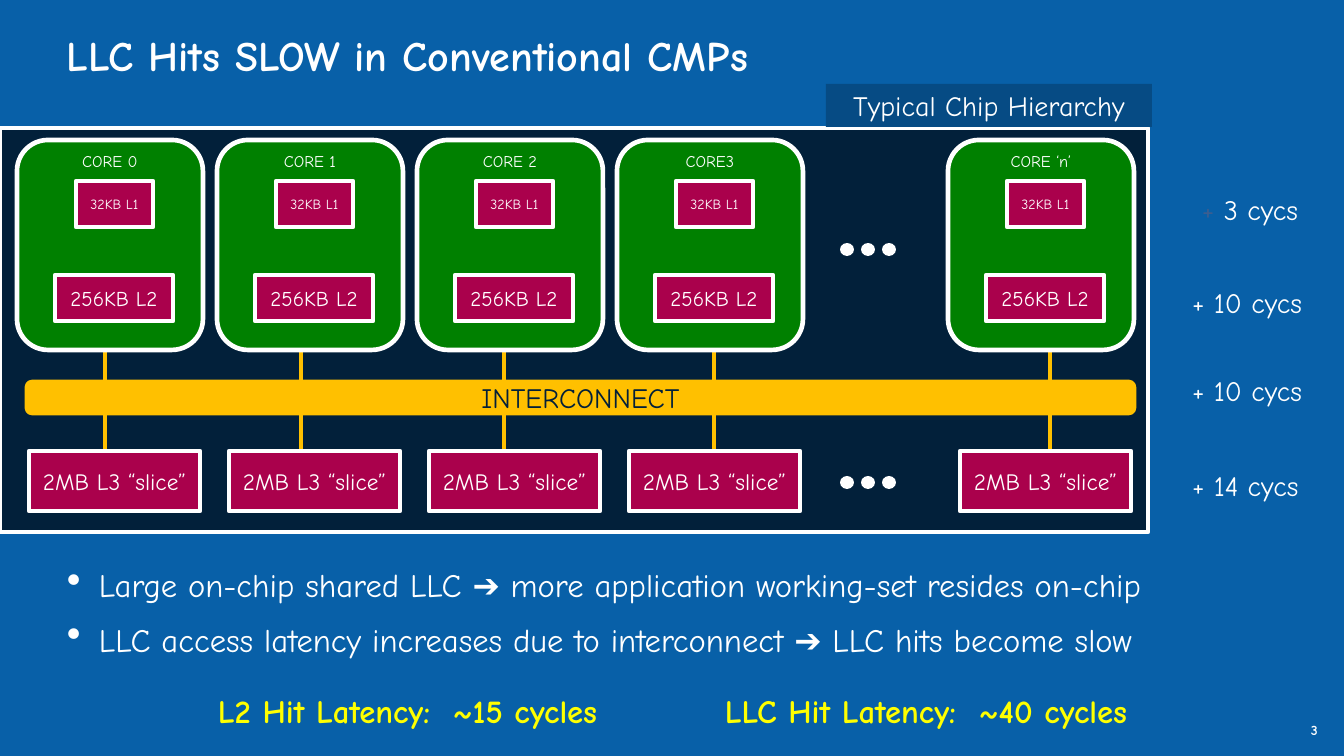
import pptx
import pptx.dml.color
import pptx.enum.shapes
import pptx.enum.text
import pptx.oxml.ns
import pptx.util
from lxml import etree

SHAPE = pptx.enum.shapes.MSO_SHAPE
ALIGN = pptx.enum.text.PP_ALIGN
ANCHOR = pptx.enum.text.MSO_ANCHOR

WHITE, NAVY, BLUE, DEEP_BLUE = "FFFFFF", "02203A", "0860A8", "064B84"
GREEN, CRIMSON, AMBER, YELLOW = "008000", "AA014C", "FFC000", "FFFF00"
FADED = "3C5E90"

CORES = [  # label, left of the core, x of its link
    ("CORE 0", 17, 105),
    ("CORE 1", 217, 301),
    ("CORE 2", 417, 504),
    ("CORE3", 617, 714),
    ("CORE ‘n’", 948, 1050),
]


def px(n):
    """Turn pixels (84 to the inch) into EMU."""
    return pptx.util.Emu(round(n * 914400 / 84))


def rgb(color):
    return pptx.dml.color.RGBColor.from_string(color)


def add_xml(parent, tag, **attrs):
    return etree.SubElement(parent, pptx.oxml.ns.qn(tag), attrs)


class Deck:
    font = "Comic Neue"
    line_width = pptx.util.Pt(4)

    def __init__(self, width, height):
        self.prs = pptx.Presentation()
        self.prs.slide_width, self.prs.slide_height = px(width), px(height)

    def add_slide(self, background):
        self.s = self.prs.slides.add_slide(self.prs.slide_layouts[6])
        fill = self.s.background.fill
        fill.solid()
        fill.fore_color.rgb = rgb(background)

    def style(self, p, size, color, bold=False):
        p.font.name, p.font.size, p.font.bold = self.font, pptx.util.Pt(size), bold
        p.font.color.rgb = rgb(color)

    def shape(self, kind, x, y, w, h, fill, line=None, text="", size=12,
              color=WHITE, anchor=ANCHOR.MIDDLE):
        sp = self.s.shapes.add_shape(kind, px(x), px(y), px(w), px(h))
        sp.shadow.inherit = False
        sp.fill.solid()
        sp.fill.fore_color.rgb = rgb(fill)
        if line:
            sp.line.color.rgb = rgb(line)
            sp.line.width = self.line_width
        else:
            sp.line.fill.background()
        if text:
            tf = sp.text_frame
            tf.word_wrap, tf.vertical_anchor = False, anchor
            tf.margin_top = tf.margin_bottom = px(2)
            p = tf.paragraphs[0]
            p.text, p.alignment = text, ALIGN.CENTER
            self.style(p, size, color)

    def text(self, x, y, w, h, lines, size, color=WHITE, bold=False,
             bullets=False, tabs=()):
        """Add a text box without insets; return its last paragraph."""
        tf = self.s.shapes.add_textbox(px(x), px(y), px(w), px(h)).text_frame
        tf.word_wrap = True
        tf.margin_left = tf.margin_top = tf.margin_right = tf.margin_bottom = 0
        for i, line in enumerate(lines):
            p = tf.paragraphs[0] if i == 0 else tf.add_paragraph()
            p.text = line
            pPr = p._p.get_or_add_pPr()
            if i:
                p.space_before = pptx.util.Pt(13)
            if bullets:
                pPr.set("marL", str(px(32)))
                pPr.set("indent", str(px(-32)))
                add_xml(pPr, "a:buSzPct", val="125000")
                add_xml(pPr, "a:buChar", char="•")
            if tabs:
                stops = add_xml(pPr, "a:tabLst")
                for stop in tabs:
                    add_xml(stops, "a:tab", pos=str(px(stop)), algn="l")
            self.style(p, size, color, bold)
        return p

    def line(self, x1, y1, x2, y2, color):
        cn = self.s.shapes.add_connector(
            pptx.enum.shapes.MSO_CONNECTOR.STRAIGHT, px(x1), px(y1), px(x2), px(y2))
        cn.line.color.rgb = rgb(color)
        cn.line.width = self.line_width
        add_xml(cn._element.spPr, "a:effectLst")

    def cache(self, x, y, w, h, text, size):
        self.shape(SHAPE.RECTANGLE, x, y, w, h, CRIMSON, WHITE, text, size)

    def core(self, x, label):
        """Add a core with its private caches and its slice of the L3."""
        self.shape(SHAPE.ROUNDED_RECTANGLE, x, 140, 186, 210, GREEN, WHITE,
                   label, 14, anchor=ANCHOR.TOP)
        self.cache(x + 59, 181, 77, 46, "32KB L1", 12)
        self.cache(x + 38, 275, 118, 46, "256KB L2", 18)
        self.cache(x + 12, 451, 171, 60, "2MB L3 “slice”", 20)

    def ellipsis(self, y):
        for i in range(3):
            self.shape(SHAPE.OVAL, 840 + 21 * i, y, 14, 13, WHITE)


def main():
    deck = Deck(1344, 756)
    deck.add_slide(BLUE)
    deck.shape(SHAPE.RECTANGLE, 0, 128, 1148, 404, NAVY, WHITE)
    deck.text(67, 30, 1210, 98, ["LLC Hits SLOW in Conventional CMPs"], 36, bold=True)
    deck.shape(SHAPE.RECTANGLE, 826, 84, 326, 43, DEEP_BLUE,
               text="Typical Chip Hierarchy", size=24)

    for label, x, link_x in CORES:
        deck.line(link_x, 345, link_x, 459, AMBER)
    deck.shape(SHAPE.ROUNDED_RECTANGLE, 27, 382, 1107, 31, AMBER, AMBER,
               "INTERCONNECT", 24, NAVY)
    for label, x, link_x in CORES:
        deck.core(x, label)
    for y in (243, 476):
        deck.ellipsis(y)

    p = deck.text(1202, 193, 130, 34, ["+"], 24, FADED)
    r = p.add_run()
    r.text = " 3 cycs"
    r.font.color.rgb = rgb(WHITE)
    for y, cycles in ((286, 10), (374, 10), (469, 14)):
        deck.text(1192, y, 140, 34, [f"+ {cycles} cycs"], 24)

    deck.text(67, 565, 1210, 122, [
        "Large on-chip shared LLC ➔ more application working-set resides on-chip",
        "LLC access latency increases due to interconnect ➔ LLC hits become slow",
    ], 28, bullets=True)
    deck.text(218, 691, 1000, 40,
              ["L2 Hit Latency:\t~15 cycles\tLLC Hit Latency:\t~40 cycles"],
              28, YELLOW, bold=True, tabs=(235, 507, 761))
    deck.text(1311, 722, 33, 34, ["3"], 12, bold=True)
    deck.prs.save("out.pptx")


if __name__ == "__main__":
    main()
